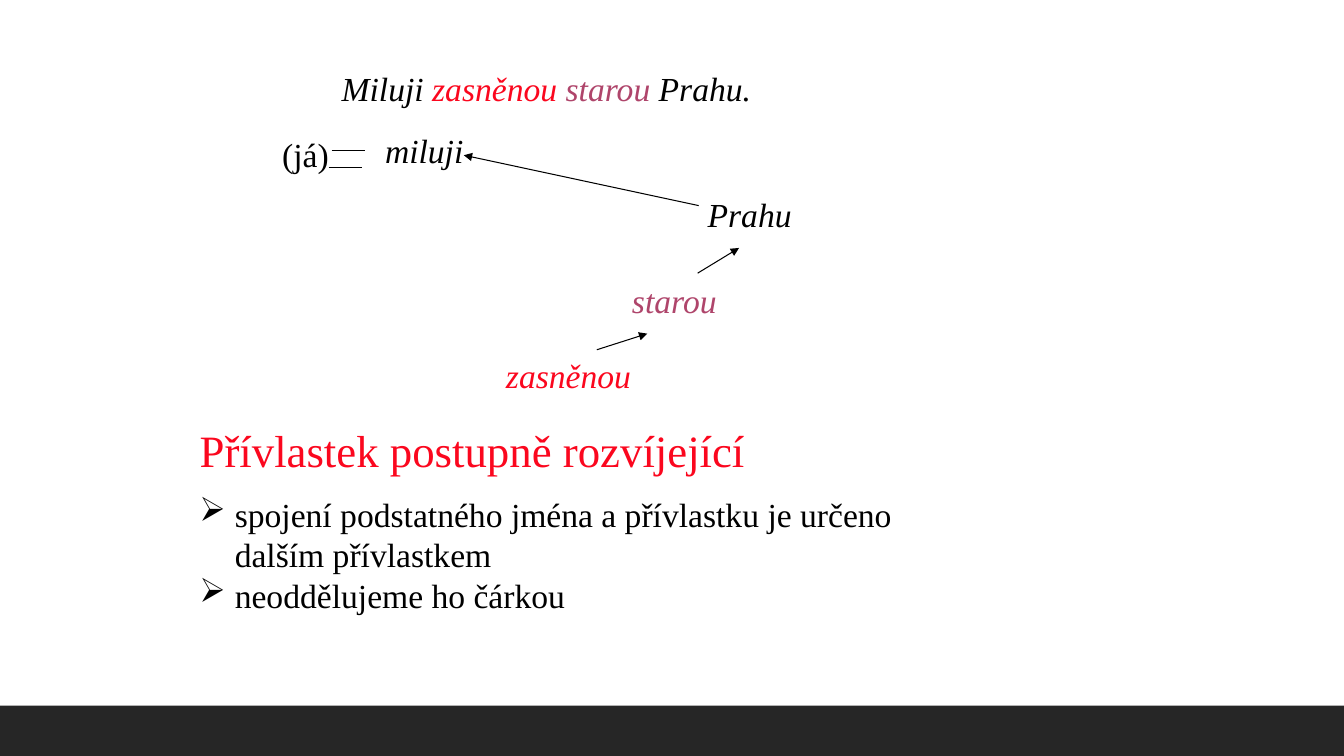
"""Builds a slide on the progressively extended attribute in Czech grammar."""
from dataclasses import dataclass

from lxml.etree import SubElement
from pptx import Presentation
from pptx.dml.color import RGBColor
from pptx.enum.shapes import MSO_CONNECTOR as CONN, MSO_SHAPE as SHAPE
from pptx.enum.text import MSO_ANCHOR as ANCHOR, MSO_AUTO_SIZE as AUTO, PP_ALIGN as ALIGN
from pptx.oxml.ns import qn
from pptx.util import Pt

PX = 9144
WIDTH, HEIGHT = 1333, 750


@dataclass(frozen=True)
class Theme:
    font: str = "Times New Roman"
    ink: str = "000000"
    red: str = "FB071E"
    plum: str = "AF456B"
    bar: str = "262626"
    heading: int = 32
    body: int = 24
    line: float = 0.75


class Page:
    def __init__(self, prs, theme):
        self.theme = theme
        self.s = prs.slides.add_slide(prs.slide_layouts[5])

    def bar(self, *box):
        sp = self.s.shapes.add_shape(SHAPE.RECTANGLE, *(v * PX for v in box))
        sp.shadow.inherit = False
        sp.fill.solid()
        sp.fill.fore_color.rgb = RGBColor.from_string(self.theme.bar)
        sp.line.fill.background()

    def run(self, p, text, color, size, italic):
        r = p.add_run()
        r.text = text
        style = {"name": self.theme.font, "size": Pt(size), "bold": False, "italic": italic}
        for key, value in style.items():
            setattr(r.font, key, value)
        r.font.color.rgb = RGBColor.from_string(color)

    def frame(self, sp, box):
        for key, value in zip(("left", "top", "width", "height"), box):
            setattr(sp, key, value * PX)
        tf = sp.text_frame
        style = {"word_wrap": True, "auto_size": AUTO.NONE, "vertical_anchor": ANCHOR.TOP}
        for key, value in style.items():
            setattr(tf, key, value)
        tf.paragraphs[0].alignment = ALIGN.LEFT
        return tf

    def title(self, box, text):
        tf = self.frame(self.s.shapes.title, box)
        self.run(tf.paragraphs[0], text, self.theme.red, self.theme.heading, False)

    def text(self, box, *parts, italic=True):
        tf = self.frame(self.s.shapes.add_textbox(0, 0, 0, 0), box)
        for text, color in parts:
            self.run(tf.paragraphs[0], text, color, self.theme.body, italic)

    def bullets(self, box, items, indent):
        tf = self.frame(self.s.shapes.add_textbox(0, 0, 0, 0), box)
        for i, lines in enumerate(items):
            p = tf.add_paragraph() if i else tf.paragraphs[0]
            pPr = p._p.get_or_add_pPr()
            pPr.set("marL", str(indent * PX))
            pPr.set("indent", str(-indent * PX))
            SubElement(pPr, qn("a:buChar"), char="➢")
            for j, line in enumerate(lines):
                if j:
                    p.add_line_break()
                self.run(p, line, self.theme.ink, self.theme.body, False)

    def line(self, *ends, arrow=False):
        c = self.s.shapes.add_connector(CONN.STRAIGHT, *(v * PX for v in ends))
        c.line.width = Pt(self.theme.line)
        c.line.color.rgb = RGBColor.from_string(self.theme.ink)
        if arrow:
            SubElement(c.line._get_or_add_ln(), qn("a:tailEnd"), type="triangle")
        SubElement(c._element.spPr, qn("a:effectLst"))


def main():
    prs = Presentation()
    prs.slide_width, prs.slide_height = WIDTH * PX, HEIGHT * PX
    t = Theme()
    page = Page(prs, t)

    page.bar(0, 700, WIDTH, 50)
    page.title((188, 414, 566, 64), "Přívlastek postupně rozvíjející")
    page.text((329, 62, 443, 50), ("Miluji ", t.ink), ("zasněnou ", t.red),
              ("starou", t.plum), (" Prahu.", t.ink))
    page.text((270, 128, 75, 50), ("(já)", t.ink), italic=False)

    for x, y, width, word, color in (
        (372, 124, 101, "miluji", t.ink),
        (692, 187, 107, "Prahu", t.ink),
        (617, 273, 107, "starou", t.plum),
        (492, 347, 150, "zasněnou", t.red),
    ):
        page.text((x, y, width, 50), (word, color))

    for x, y in ((326, 166), (329, 149)):
        page.line(x, y, x + 33, y)
    for ends in ((693, 204, 460, 154), (692, 271, 733, 246), (592, 347, 642, 331)):
        page.line(*ends, arrow=True)

    page.bullets((188, 485, 721, 131), (
        ("spojení podstatného jména a přívlastku je určeno", "dalším přívlastkem"),
        ("neoddělujeme ho čárkou",),
    ), indent=35)
    prs.save("out.pptx")


if __name__ == "__main__":
    main()
